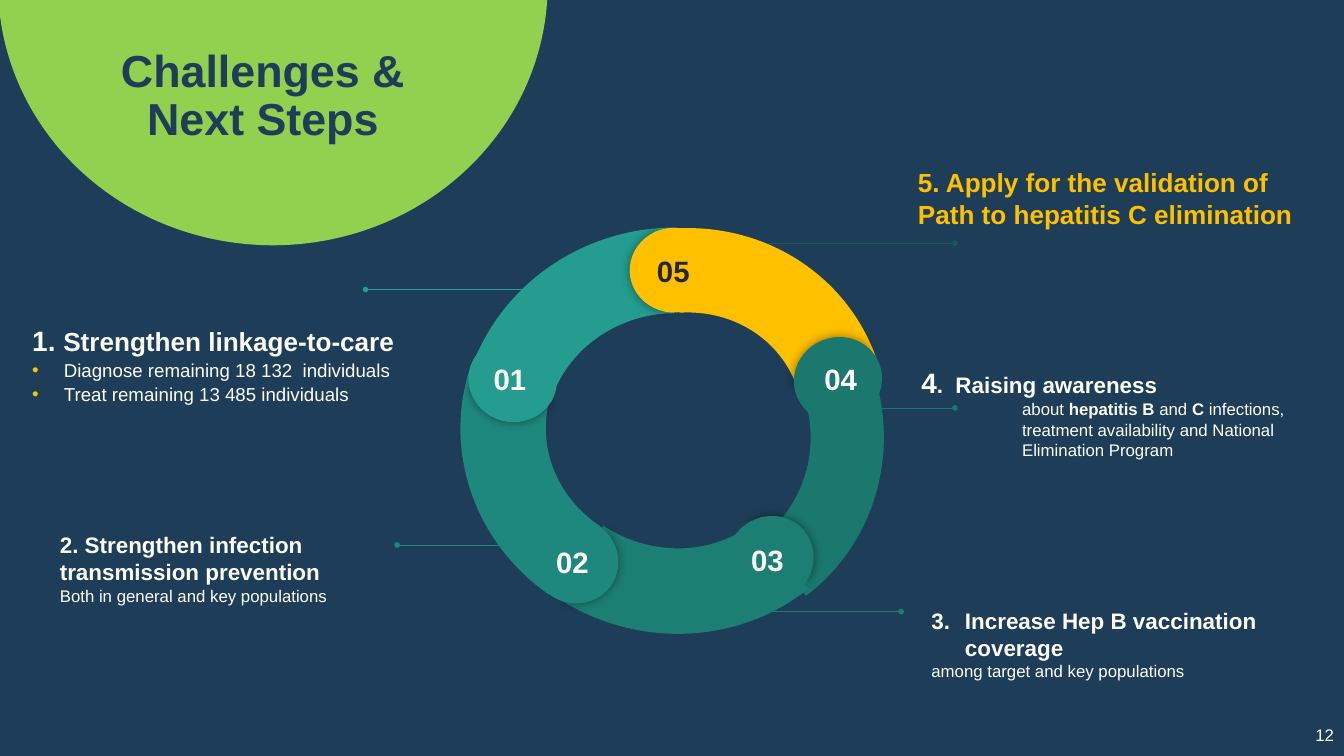
from dataclasses import dataclass

from lxml import etree
from pptx import Presentation
from pptx import util as u
from pptx.dml.color import RGBColor
from pptx.enum import shapes, text
from pptx.oxml import ns

COLUMNS, ROWS = 20, 11.25
CELL = u.Inches(1)
FONT = "Arial"
NAVY, WHITE, LIME, GOLD, INK = "1E3D58", "FFFFFF", "92D050", "FFC000", "262626"
TEALS = {"01": "249C90", "02": "1F887E", "03": "1D7E74", "04": "1B786E"}
HALF_TURN = 179.3


@dataclass
class Box:
    left: float
    top: float
    width: float
    height: float

    def inner(self, left, top, width, height):
        return Box(self.left + left, self.top + top, width, height)

    def lengths(self):
        return [cells(n) for n in (self.left, self.top, self.width, self.height)]


@dataclass
class Line:
    spans: list
    left: float = 0
    hang: float = 0
    bullet: str = ""
    start: int = 0
    bullet_color: str = WHITE
    before: float = 0
    align: text.PP_ALIGN = text.PP_ALIGN.LEFT


def cells(count):
    return int(count * CELL)


def color(value):
    return RGBColor.from_string(value)


def add_child(parent, tag, **attributes):
    return etree.SubElement(parent, ns.qn(tag), attributes)


def paint(shape, value):
    shape.shadow.inherit = False
    shape.fill.solid()
    shape.fill.fore_color.rgb = color(value)
    shape.line.fill.background()


def format_span(span, size, bold, value):
    span.font.name = FONT
    span.font.size = u.Pt(size)
    span.font.bold = bold
    span.font.color.rgb = color(value)


def set_bullet(properties, line):
    shade = add_child(properties, "a:buClr")
    add_child(shade, "a:srgbClr", val=line.bullet_color)
    add_child(properties, "a:buFont", typeface=FONT)
    if line.start:
        add_child(properties, "a:buAutoNum", type="arabicPeriod", startAt=str(line.start))
    else:
        add_child(properties, "a:buChar", char=line.bullet)


def set_insets(frame, left, top, right, bottom):
    frame.margin_left, frame.margin_top = cells(left), cells(top)
    frame.margin_right, frame.margin_bottom = cells(right), cells(bottom)


def add_text(page, box, lines, value=WHITE, anchor=text.MSO_ANCHOR.TOP):
    frame = page.shapes.add_textbox(*box.lengths()).text_frame
    frame.word_wrap = True
    frame.vertical_anchor = anchor
    set_insets(frame, 0, 0, 0, 0)
    for index, line in enumerate(lines):
        para = frame.add_paragraph() if index else frame.paragraphs[0]
        para.alignment = line.align
        para.space_before = u.Pt(line.before)
        properties = para._p.get_or_add_pPr()
        properties.set("marL", str(cells(line.left)))
        properties.set("indent", str(cells(-line.hang)))
        if line.bullet or line.start:
            set_bullet(properties, line)
        for words, size, bold in line.spans:
            span = para.add_run()
            span.text = words
            format_span(span, size, bold, value)


def add_leader(page, start, end, row, value):
    leader = page.shapes.add_connector(
        shapes.MSO_CONNECTOR.STRAIGHT, cells(start), cells(row), cells(end), cells(row))
    leader.line.color.rgb = color(value)
    leader.line.width = u.Pt(0.75)
    add_child(leader.line._get_or_add_ln(), "a:tailEnd", type="oval")
    add_child(leader._element.spPr, "a:effectLst")


def add_heading(page, box):
    disc = page.shapes.add_shape(shapes.MSO_SHAPE.OVAL, *box.lengths())
    paint(disc, LIME)
    title = page.shapes.title
    title.left, title.top, title.width, title.height = box.inner(0.73, 4.14, 6.61, 2.02).lengths()
    frame = title.text_frame
    frame.word_wrap = True
    frame.auto_size = text.MSO_AUTO_SIZE.NONE
    frame.vertical_anchor = text.MSO_ANCHOR.TOP
    set_insets(frame, 0.24, 0.69, 0.24, 0.07)
    para = frame.paragraphs[0]
    para.text = "Challenges & \vNext Steps "
    para.alignment = text.PP_ALIGN.CENTER
    para.line_spacing = 0.9
    para.space_before = u.Pt(0)
    for span in para.runs:
        format_span(span, 48, True, NAVY)
    page.shapes._spTree.remove(disc._element)
    page.shapes._spTree.insert(2, disc._element)


def add_callouts(page):
    for leader in [(8.28, 5.44, 4.31, TEALS["01"]), (7.94, 5.91, 8.11, TEALS["02"]),
                   (8.84, 13.41, 9.1, TEALS["03"]), (12.27, 14.21, 6.07, TEALS["04"]),
                   (11.39, 14.21, 3.62, "155B54")]:
        add_leader(page, *leader)
    facts = [Line([(words, 20, False)], 0.47, 0.47, "•", bullet_color=GOLD, before=1.8)
             for words in ("Diagnose remaining 18 132  individuals",
                           "Treat remaining 13 485 individuals")]
    add_text(page, Box(0.48, 4.82, 6.16, 1.3), [
        Line([("1. ", 30, True), ("Strengthen linkage-to-care", 28, True)], before=1.8), *facts])
    add_text(page, Box(0.89, 7.91, 5.65, 1.2), [
        Line([("2. Strengthen infection transmission prevention ", 24, True)]),
        Line([("Both in general and key populations", 18, False)])])
    add_text(page, Box(13.86, 9.03, 5.46, 1.2), [
        Line([("Increase Hep B vaccination coverage", 24, True)], 0.5, 0.5, start=3),
        Line([("among target and key populations", 18, False)])])
    add_text(page, Box(13.71, 5.44, 5.97, 1.5), [
        Line([("4", 30, True), (".  Raising awareness", 24, True)]),
        Line([("about", 18, False), (" hepatitis B", 18, True), (" and", 18, False),
              (" C ", 18, True),
              ("infections, treatment availability and National Elimination Program", 18, False)],
             1.5)])
    add_text(page, Box(13.66, 2.48, 5.73, 1), [
        Line([("5. Apply for the validation of Path to hepatitis C elimination", 28, True)])], GOLD)


def add_sector(page, kind, box, turn, adjustments, value):
    sector = page.shapes.add_shape(kind, *box.lengths())
    paint(sector, value)
    sector.rotation = turn % 360
    for index, amount in enumerate(adjustments):
        sector.adjustments[index] = amount
    return sector


def add_knob(page, box, turn, value):
    pie = shapes.MSO_SHAPE.PIE
    raised = add_sector(page, pie, box, turn, (61.9, 149.96), value)
    effects = raised._element.spPr.find(ns.qn("a:effectLst"))
    shadow = add_child(effects, "a:outerShdw", blurRad=str(u.Pt(11.2)), dist="0", dir="0",
                       algn="ctr", rotWithShape="0")
    shade = add_child(shadow, "a:srgbClr", val="000000")
    add_child(shade, "a:alpha", val="41000")
    add_sector(page, pie, box, turn + HALF_TURN, (40.28, 171.84), value)


def add_ring(page, box):
    fills = {**TEALS, "05": GOLD}
    bands = {
        "01": ((0.04, 0.19, 6.32, 6.07), 350, (125.13, 168.68, 0.21)),
        "02": ((0.18, 0.05, 6.05, 6.31), 277, (126.03, 168.68, 0.21)),
        "03": ((0.03, 0.15, 6.32, 6.06), 204, (123.3, 168.68, 0.21)),
        "04": ((0.22, 0.02, 6.06, 6.32), 132, (126.03, 168.01, 0.18)),
        "05": ((0.32, 0.09, 5.98, 6.26), 60, (126.03, 168.68, 0.21)),
    }
    knobs = {
        "01": ((0.2, 1.79, 1.26, 1.32), 284.1, 0.01),
        "02": ((1.09, 4.51, 1.32, 1.26), 211.1, 0.05),
        "03": ((4, 4.49, 1.32, 1.26), 139.1, 0.04),
        "04": ((5.04, 1.79, 1.26, 1.32), 67.1, 0.09),
        "05": ((2.57, 0.19, 1.32, 1.26), 357.1, 0.07),
    }
    layers = [("02", "04", "05"), ("04",), ("03",), ("02",), ("01",), ("05", "03", "01")]
    for depth, names in enumerate(layers):
        for name in names:
            if depth % 2:
                place, turn, nudge = knobs[name]
                add_knob(page, box.inner(*place), turn, fills[name])
            else:
                place, turn, adjustments = bands[name]
                add_sector(page, shapes.MSO_SHAPE.BLOCK_ARC, box.inner(*place), turn,
                           adjustments, fills[name])
    for name, (place, turn, nudge) in knobs.items():
        label = box.inner(place[0] + nudge, place[1] + 0.38, 1.16, 0.58)
        add_text(page, label, [Line([(name, 31.5, True)], align=text.PP_ALIGN.CENTER)],
                 INK if name == "05" else WHITE)


def main():
    deck = Presentation()
    deck.slide_width, deck.slide_height = cells(COLUMNS), cells(ROWS)
    page = deck.slides.add_slide(deck.slide_layouts[5])
    page.background.fill.solid()
    page.background.fill.fore_color.rgb = color(NAVY)
    add_heading(page, Box(-0.03, -4.11, 8.18, 7.76))
    add_callouts(page)
    add_ring(page, Box(6.8, 3.2, 6.4, 6.4))
    add_text(page, Box(19.14, 10.64, 0.71, 0.6),
             [Line([("12", 18, False)], align=text.PP_ALIGN.RIGHT)], anchor=text.MSO_ANCHOR.MIDDLE)
    deck.save("out.pptx")


if __name__ == "__main__":
    main()
